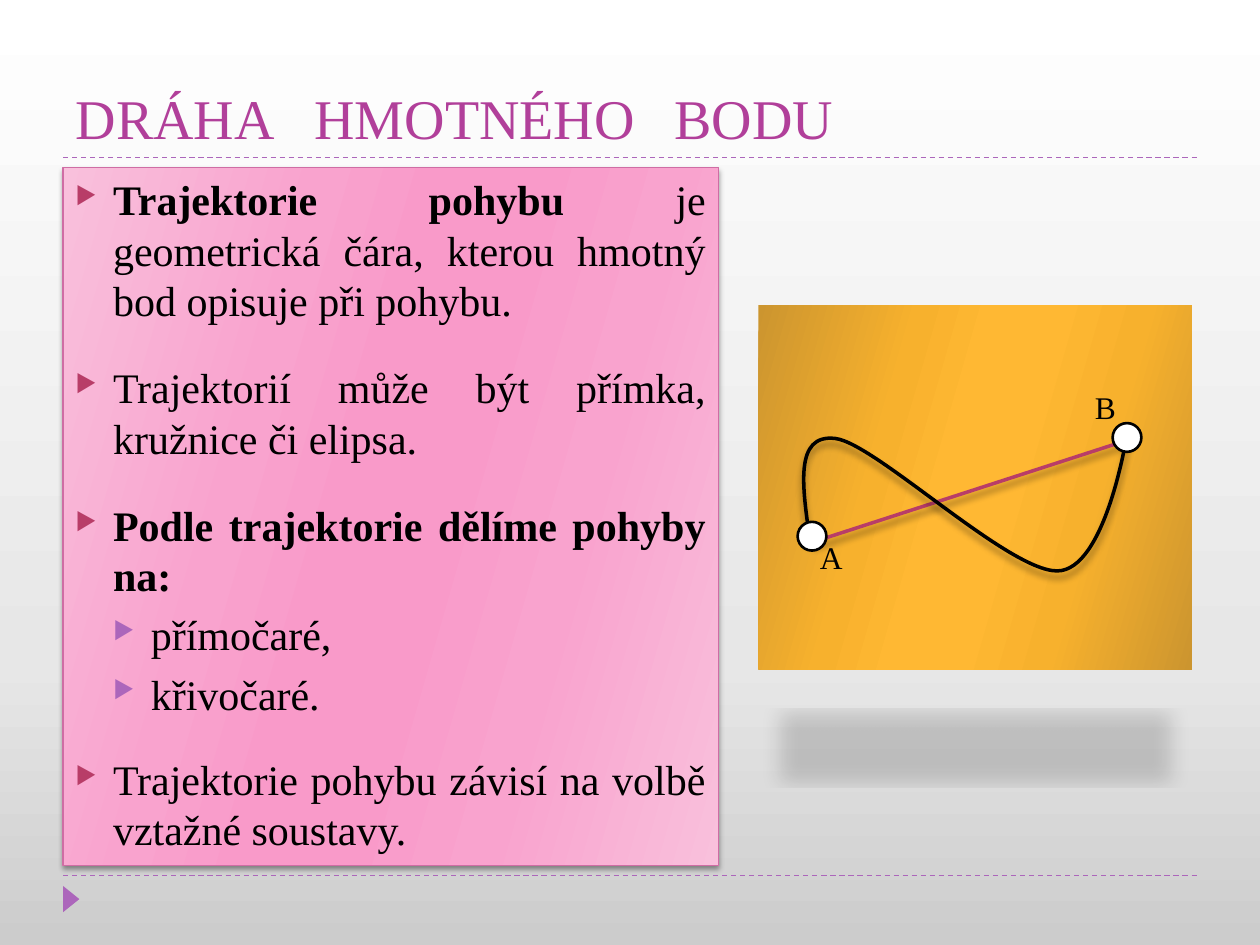
"""Build a slide on the trajectory of a point mass, with two paths from A to B."""

from dataclasses import dataclass
from typing import Any

from lxml import etree
from pptx import Presentation
from pptx.dml.color import RGBColor
from pptx.enum.dml import MSO_LINE
from pptx.enum.shapes import MSO_CONNECTOR, MSO_SHAPE
from pptx.enum.text import MSO_ANCHOR, PP_ALIGN
from pptx.oxml.ns import qn
from pptx.util import Cm, Pt

RECTANGLE = MSO_SHAPE.RECTANGLE
OVAL = MSO_SHAPE.OVAL
TRIANGLE = MSO_SHAPE.ISOSCELES_TRIANGLE
STRAIGHT = MSO_CONNECTOR.STRAIGHT
DASH = MSO_LINE.DASH
LEFT, JUSTIFY = PP_ALIGN.LEFT, PP_ALIGN.JUSTIFY
TOP, BOTTOM = MSO_ANCHOR.TOP, MSO_ANCHOR.BOTTOM

COLORS = {
    "title": "B13F9A", "purple": "AC66BB", "crimson": "B83D68",
    "panel_edge": "CF6DA4", "black": "000000", "white": "FFFFFF",
}
BACKGROUND_STOPS = ((0, "CCCCCC"), (30, "E7E7E7"), (100, "FFFFFF"))
PINK = ("F9C0DC", "F9A3CE", "F99AC9")
ORANGE = ("CC952F", "F7B12D", "FFB833")
CURVE = (
    (16.33, 10.9), (16.18, 9.83), (16, 8.74), (16.84, 8.84), (17.65, 8.94),
    (20.32, 11.51), (21.31, 11.51), (22.28, 11.51), (22.71, 8.81), (22.71, 8.81),
)
DOT_SIZE = 0.58


@dataclass(frozen=True)
class Shadow:
    opacity: int
    blur: float
    distance: float
    scale_x: int = 100
    scale_y: int = 100


@dataclass(frozen=True)
class Bullet:
    text: str
    bold: str = ""
    level: int = 0
    space_before: float = 6


@dataclass(frozen=True)
class Point:
    name: str
    dot: tuple[float, float]
    label: tuple[float, float]


PANEL_SHADOW = Shadow(40, 3, 2)
PATH_SHADOW = Shadow(40, 4, 3.4)
FLOOR_SHADOW = Shadow(15, 12, 25, 90, -19)
BULLETS = (
    Bullet(" je geometrická čára, kterou hmotný bod opisuje při pohybu.", "Trajektorie pohybu"),
    Bullet("Trajektorií může být přímka, kružnice či elipsa.", space_before=21),
    Bullet("", "Podle trajektorie dělíme pohyby na:", space_before=21),
    Bullet("přímočaré,", level=1, space_before=5),
    Bullet("křivočaré.", level=1, space_before=5),
    Bullet("Trajektorie pohybu závisí na volbě vztažné soustavy.", space_before=20),
)
POINTS = (
    Point("A", (16.08, 10.52), (16.28, 10.72)),
    Point("B", (22.43, 8.53), (21.82, 7.7)),
)


def rgb(name: str) -> RGBColor:
    return RGBColor.from_string(COLORS[name])


def apply_format(target: Any, values: dict[str, Any]) -> None:
    for name, value in values.items():
        setattr(target, name, value)


def add_run(paragraph: Any, text: str, size: float, color: str, bold: bool = False) -> Any:
    run = paragraph.add_run()
    run.text = text
    apply_format(run.font, {"name": "Times New Roman", "size": Pt(size), "bold": bold})
    run.font.color.rgb = rgb(color)
    return run


def set_gradient(fill: Any, element: Any, stops: tuple, angle: float) -> None:
    fill.gradient()
    fill.gradient_angle = 360 - angle
    stop_list = element.find(".//" + qn("a:gsLst"))
    stop_list.clear()
    for position, color in stops:
        stop = etree.SubElement(stop_list, qn("a:gs"), pos=str(position * 1000))
        etree.SubElement(stop, qn("a:srgbClr"), val=color)


def set_line(shape: Any, color: str, width: float) -> None:
    shape.line.color.rgb = rgb(color)
    shape.line.width = Pt(width)


def set_shadow(shape: Any, shadow: Shadow | None = None) -> None:
    effects = etree.SubElement(shape.element.spPr, qn("a:effectLst"))
    if shadow:
        outer = etree.SubElement(
            effects, qn("a:outerShdw"), blurRad=str(Pt(shadow.blur)),
            dist=str(Pt(shadow.distance)), dir="5400000", sx=str(shadow.scale_x * 1000),
            sy=str(shadow.scale_y * 1000), rotWithShape="0")
        color = etree.SubElement(outer, qn("a:srgbClr"), val=COLORS["black"])
        etree.SubElement(color, qn("a:alpha"), val=str(shadow.opacity * 1000))


def add_solid(slide: Any, kind: Any, box: tuple, color: str) -> Any:
    shape = slide.shapes.add_shape(kind, *map(Cm, box))
    shape.fill.solid()
    shape.fill.fore_color.rgb = rgb(color)
    shape.line.fill.background()
    return shape


def add_glossy_panel(slide: Any, box: tuple, shades: tuple) -> Any:
    edge, middle, center = shades
    stops = tuple(zip((0, 30, 45, 55, 73, 100), (edge, middle, center, center, middle, edge)))
    shape = slide.shapes.add_shape(RECTANGLE, *map(Cm, box))
    set_gradient(shape.fill, shape.element, stops, 16)
    shape.line.fill.background()
    return shape


def add_line(slide: Any, ends: tuple, color: str, width: float, shadow: Shadow | None = None) -> Any:
    line = slide.shapes.add_connector(STRAIGHT, *map(Cm, ends))
    set_line(line, color, width)
    set_shadow(line, shadow)
    return line


def add_curve(slide: Any, points: tuple) -> None:
    start, *rest = [(Cm(x), Cm(y)) for x, y in points]
    builder = slide.shapes.build_freeform(*start)
    builder.add_line_segments(rest, close=False)
    shape = builder.convert_to_shape()
    segments = list(shape.element.iter(qn("a:lnTo")))
    for index in range(0, len(segments), 3):
        bezier = etree.Element(qn("a:cubicBezTo"))
        segments[index].addprevious(bezier)
        for segment in segments[index:index + 3]:
            bezier.append(segment[0])
            segment.getparent().remove(segment)
    shape.fill.background()
    set_line(shape, "black", 2)
    set_shadow(shape, PATH_SHADOW)


def add_bullet(paragraph: Any, bullet: Bullet) -> None:
    apply_format(paragraph, {
        "alignment": JUSTIFY, "level": bullet.level, "line_spacing": 1.0,
        "space_before": Pt(bullet.space_before)})
    properties = paragraph._p.get_or_add_pPr()
    indent = Cm(0.76)
    properties.set("marL", str(indent * (bullet.level + 1)))
    properties.set("indent", str(-indent))
    color = etree.SubElement(properties, qn("a:buClr"))
    etree.SubElement(color, qn("a:srgbClr"), val=COLORS["purple" if bullet.level else "crimson"])
    etree.SubElement(properties, qn("a:buSzPct"), val="58000")
    etree.SubElement(properties, qn("a:buChar"), char="▶")
    for text, bold in ((bullet.bold, True), (bullet.text, False)):
        if text:
            add_run(paragraph, text, 24, "black", bold)


def fill_title(title: Any, words: tuple) -> None:
    apply_format(title, dict(zip(("left", "top", "width", "height"), map(Cm, (1.27, 0.43, 22.86, 2.74)))))
    title.text_frame.vertical_anchor = BOTTOM
    paragraph = title.text_frame.paragraphs[0]
    paragraph.alignment = LEFT
    for index, word in enumerate(words):
        if index:
            space = add_run(paragraph, " ", 32, "title")
            space.font._element.set("spc", "1450")
        add_run(paragraph, word, 32, "title")


def main() -> None:
    presentation = Presentation()
    apply_format(presentation, {"slide_width": Cm(25.4), "slide_height": Cm(19.05)})
    slide = presentation.slides.add_slide(presentation.slide_layouts[5])
    set_gradient(slide.background.fill, slide.element, BACKGROUND_STOPS, 270)

    for y in (17.65, 3.18):
        add_line(slide, (1.27, y, 24.13, y), "purple", 0.75).line.dash_style = DASH
    marker = add_solid(slide, TRIANGLE, (1.17, 17.96, 0.53, 0.33), "purple")
    marker.rotation = 90
    set_shadow(marker)
    fill_title(slide.shapes.title, ("DRÁHA", "HMOTNÉHO", "BODU"))

    panel = add_glossy_panel(slide, (1.27, 3.38, 13.21, 14.07), PINK)
    set_line(panel, "panel_edge", 0.75)
    set_shadow(panel, PANEL_SHADOW)
    frame = panel.text_frame
    apply_format(frame, {"word_wrap": True, "vertical_anchor": TOP})
    for index, bullet in enumerate(BULLETS):
        add_bullet(frame.add_paragraph() if index else frame.paragraphs[0], bullet)

    set_shadow(add_glossy_panel(slide, (15.29, 6.15, 8.74, 7.34), ORANGE), FLOOR_SHADOW)
    add_line(slide, (16.41, 10.92, 22.83, 8.84), "crimson", 2, PATH_SHADOW)
    add_curve(slide, CURVE)
    for point in POINTS:
        dot = add_solid(slide, OVAL, (*point.dot, DOT_SIZE, DOT_SIZE), "white")
        set_line(dot, "black", 1.5)
        set_shadow(dot)
        label = slide.shapes.add_textbox(*map(Cm, (*point.label, 1.19, 1.02)))
        label.text_frame.word_wrap = True
        add_run(label.text_frame.paragraphs[0], point.name, 18, "black")
    presentation.save("out.pptx")


if __name__ == "__main__":
    main()
